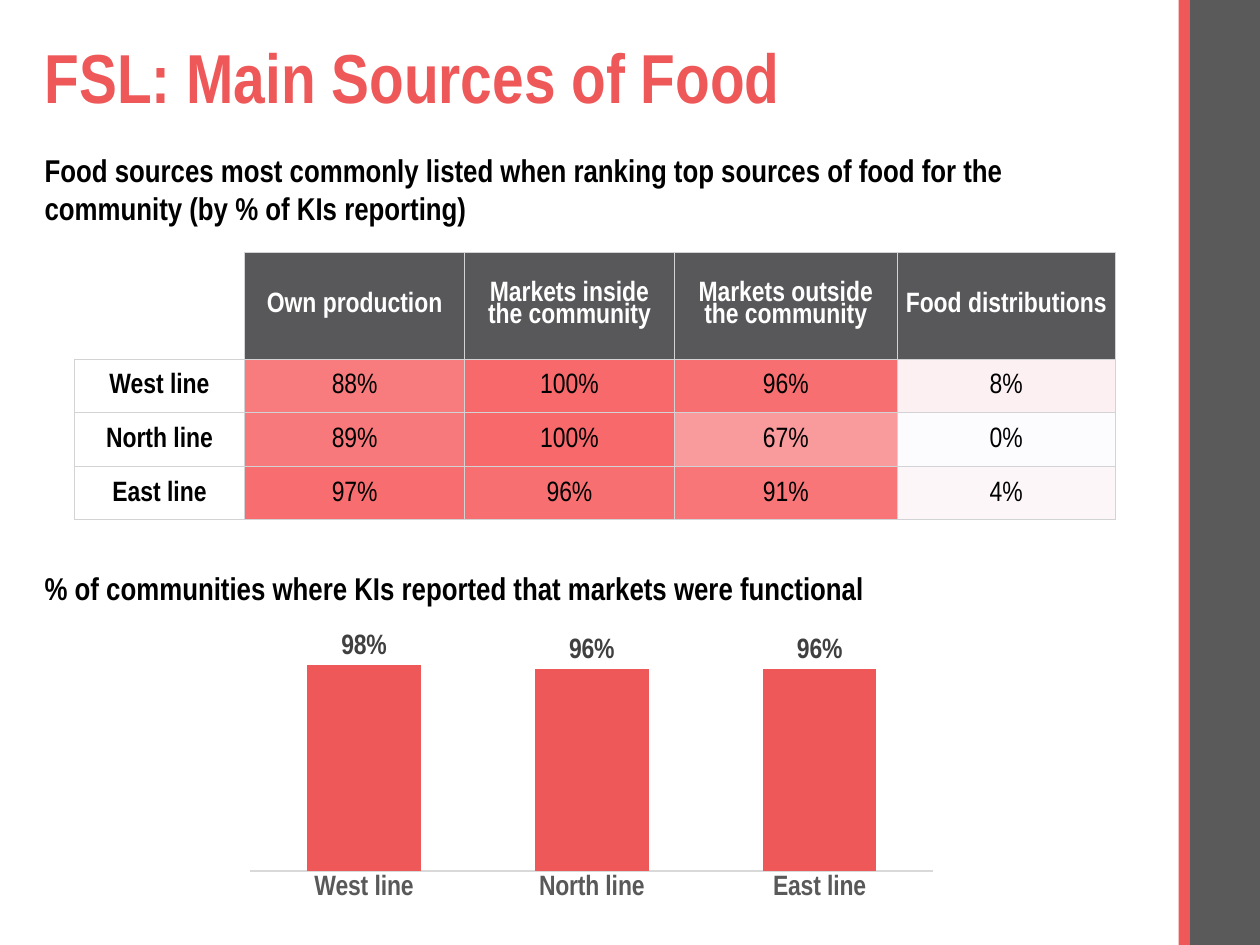
from lxml.etree import SubElement
from pptx import Presentation
from pptx.chart.data import CategoryChartData
from pptx.dml.color import RGBColor
from pptx.enum.chart import XL_CHART_TYPE, XL_LABEL_POSITION, XL_TICK_MARK
from pptx.enum.shapes import MSO_SHAPE
from pptx.enum.text import MSO_ANCHOR, PP_ALIGN
from pptx.oxml import parse_xml
from pptx.oxml.ns import nsdecls, qn
from pptx.util import Cm, Pt

FONT = "Arial Narrow"
RED, GREY, EDGE = "EE5859", "58585A", "D1D3D4"
LINES = ["West line", "North line", "East line"]
HEADS = ["Own production", "Markets inside\nthe community",
         "Markets outside\nthe community", "Food distributions"]
SHARES = [[88, 100, 96, 8], [89, 100, 67, 0], [97, 96, 91, 4]]
WORKING = [0.98, 0.96, 0.96]


def tint(code):
    return RGBColor.from_string(code)


def style(font, size, color, bold=False):
    font.name, font.size, font.bold = FONT, Pt(size), bold
    font.color.rgb = tint(color)


def write(frame, text, size=16, color="000000", bold=True,
          align=PP_ALIGN.LEFT, space=None):
    frame.word_wrap = True
    for i, line in enumerate(text.split("\n")):
        para = frame.paragraphs[0] if i == 0 else frame.add_paragraph()
        para.alignment = align
        if space:
            para.line_spacing = space
        run = para.add_run()
        run.text = line
        style(run.font, size, color, bold)


def heat(share):
    """Blend from near white at 0 to red at 100."""
    low, high = (252, 252, 255), (248, 105, 107)
    mix = [round(a + (b - a) * share / 100) for a, b in zip(low, high)]
    return "".join(f"{part:02X}" for part in mix)


def edge(cell, sides):
    props = cell._tc.get_or_add_tcPr()
    for i, side in enumerate("LRTB"):
        shown = side in sides
        line = SubElement(props, qn(f"a:ln{side}"), w=str(Pt(0.5) if shown else 0))
        if shown:
            fill = SubElement(line, qn("a:solidFill"))
            SubElement(fill, qn("a:srgbClr"), val=EDGE)
        else:
            SubElement(line, qn("a:noFill"))
        props.insert(i, line)


def paint(cell, text, fill=None, sides="LRTB", **look):
    cell.margin_left = cell.margin_right = cell.margin_top = Cm(0.03)
    cell.margin_bottom = 0
    cell.vertical_anchor = MSO_ANCHOR.MIDDLE
    if fill:
        cell.fill.solid()
        cell.fill.fore_color.rgb = tint(fill)
    else:
        cell.fill.background()
    edge(cell, sides)
    if text:
        write(cell.text_frame, text, align=PP_ALIGN.CENTER, **look)


def add_side(slide, left, top, width, height):
    # Thin red band, then the wide grey band
    thin = 0.23
    for x, wide, color in [(left, thin, RED), (left + thin, width - thin, "5A5A5A")]:
        band = slide.shapes.add_shape(MSO_SHAPE.RECTANGLE, Cm(x), Cm(top),
                                      Cm(wide), Cm(height))
        band.shadow.inherit = False
        band.fill.solid()
        band.fill.fore_color.rgb = tint(color)
        band.line.fill.background()


def add_title(slide, left, top, width, height, text):
    title = slide.shapes.title
    title.left, title.top = Cm(left), Cm(top)
    title.width, title.height = Cm(width), Cm(height)
    title.text_frame.vertical_anchor = MSO_ANCHOR.MIDDLE
    write(title.text_frame, text, size=39.6, color=RED, space=0.9)


def add_head(slide, left, top, width, height, text):
    box = slide.shapes.add_textbox(Cm(left), Cm(top), Cm(width), Cm(height))
    write(box.text_frame, text, size=18)


def add_grid(slide, left, top, width, height):
    frame = slide.shapes.add_table(len(LINES) + 1, len(HEADS) + 1, Cm(left),
                                   Cm(top), Cm(width), Cm(height))
    table = frame.table
    table.first_row = table.horz_banding = False
    parts = [1.35, 1.75, 1.66, 1.77, 1.73]
    for col, part in zip(table.columns, parts):
        col.width = Cm(round(width * part / sum(parts), 2))
    # The head row is twice as tall as the others
    unit = height / (len(LINES) + 2)
    for i, row in enumerate(table.rows):
        row.height = Cm(round(unit * (1 if i else 2), 2))
    # Head row
    paint(table.cell(0, 0), "", sides="RB")
    for c, head in enumerate(HEADS, 1):
        paint(table.cell(0, c), head, fill=GREY, color="FFFFFF", space=0.83)
    # Shares by line
    for r, (name, shares) in enumerate(zip(LINES, SHARES), 1):
        paint(table.cell(r, 0), name)
        for c, share in enumerate(shares, 1):
            paint(table.cell(r, c), f"{share}%", fill=heat(share), bold=False)


def add_bars(slide, left, top, width, height):
    data = CategoryChartData(number_format="0%")
    data.categories = LINES
    data.add_series("Series 1", WORKING)
    chart = slide.shapes.add_chart(XL_CHART_TYPE.COLUMN_CLUSTERED, Cm(left),
                                   Cm(top), Cm(width), Cm(height), data).chart
    chart.has_legend = chart.has_title = False
    style(chart.font, 10, "000000")
    # Axes
    base, scale = chart.category_axis, chart.value_axis
    base.major_tick_mark = XL_TICK_MARK.NONE
    base.format.line.color.rgb = tint("D9D9D9")
    base.format.line.width = Pt(0.75)
    style(base.tick_labels.font, 16, "595959", True)
    scale.minimum_scale, scale.maximum_scale = 0, 1
    scale.has_major_gridlines = scale.visible = False
    # Bars and labels
    plot = chart.plots[0]
    plot.gap_width, plot.overlap = 100, -27
    plot.vary_by_categories = False
    bars = plot.series[0]
    bars.format.fill.solid()
    bars.format.fill.fore_color.rgb = tint(RED)
    labels = bars.data_labels
    labels.show_value = True
    labels.number_format, labels.number_format_is_linked = "0%", False
    labels.position = XL_LABEL_POSITION.OUTSIDE_END
    style(labels.font, 16, "404040", True)
    # Inner plot area
    area = chart._chartSpace.chart.plotArea
    for old in area.findall(qn("c:layout")):
        area.remove(old)
    spots = "".join(f'<c:{k} val="{v}"/>' for k, v in [
        ("layoutTarget", "inner"), ("xMode", "edge"), ("yMode", "edge"),
        ("x", 0.03), ("y", 0.11), ("w", 0.94), ("h", 0.72)])
    area.insert(0, parse_xml(f'<c:layout {nsdecls("c")}><c:manualLayout>{spots}'
                             '</c:manualLayout></c:layout>'))


def main():
    deck = Presentation()
    deck.slide_width, deck.slide_height = Cm(25.4), Cm(19.05)
    slide = deck.slides.add_slide(deck.slide_layouts[5])
    add_side(slide, 23.76, 0, 1.64, 19.05)
    add_title(slide, 0.65, 0.69, 22.07, 1.88, "FSL: Main Sources of Food")
    add_head(slide, 0.65, 2.92, 21.84, 1.8,
             "Food sources most commonly listed when ranking top sources of "
             "food for the community (by % of KIs reporting)")
    add_head(slide, 0.65, 11.35, 21.84, 1.02,
             "% of communities where KIs reported that markets were functional")
    add_grid(slide, 1.5, 5.08, 20.98, 5.41)
    add_bars(slide, 4.6, 12.67, 14.66, 5.89)
    deck.save("out.pptx")


if __name__ == "__main__":
    main()
